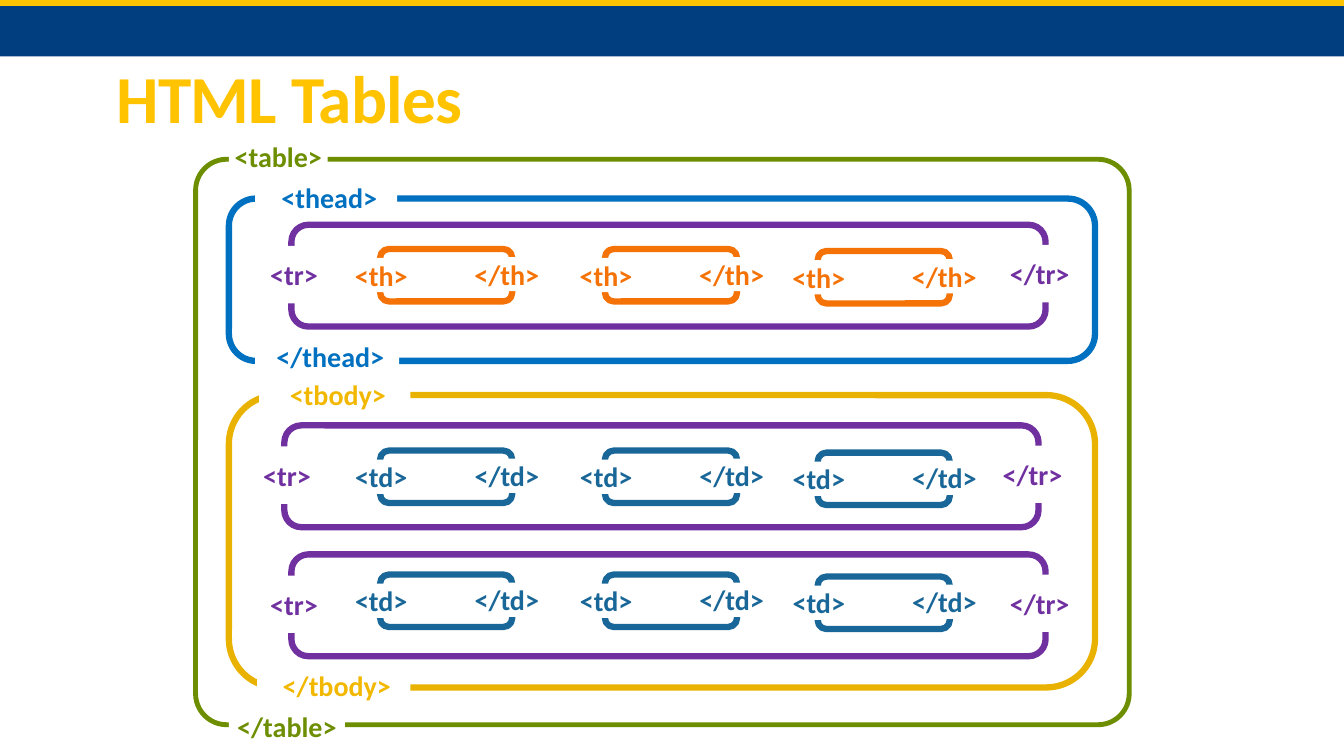
from pptx import Presentation
from pptx.dml.color import RGBColor
from pptx.enum.shapes import MSO_SHAPE as Shape
from pptx.enum.text import MSO_ANCHOR as Anchor, PP_ALIGN as Align
from pptx.util import Inches, Pt

COLORS = {
    "white": "FFFFFF", "navy": "013E7F", "gold": "FFC300",
    "table": "6C8E00", "thead": "0070C0", "tbody": "EAB200",
    "tbody text": "F2B800", "tr": "7030A0", "th": "F47206", "td": "196798",
}

BANDS = [("navy", (0, 0.06, 13.33, 0.5)), ("gold", (0, -0.01, 13.33, 0.07))]
TITLE = ("HTML Tables", (1.06, 0.53, 11.1, 0.98))

SECTIONS = [
    {"frame": (1.94, 1.58, 9.26, 5.61), "color": "table", "text": "table",
     "weight": 3.5, "corner": 0.055, "anchor": Anchor.TOP,
     "tags": [("<table>", (2.27, 1.38, 0.98, 0.34)),
              ("</table>", (2.27, 7.04, 1.15, 0.34))]},
    {"frame": (2.27, 1.97, 8.59, 1.61), "color": "thead", "text": "thead",
     "weight": 4.5, "corner": 0.1667, "anchor": Anchor.TOP,
     "tags": [(" <thead>", (2.53, 1.79, 1.41, 0.37)),
              (" </thead>", (2.53, 3.37, 1.43, 0.37))]},
    {"frame": (2.27, 3.92, 8.59, 2.9), "color": "tbody", "text": "tbody text",
     "weight": 4.5, "corner": 0.1667, "anchor": Anchor.MIDDLE,
     "tags": [(" <tbody>", (2.57, 3.74, 1.5, 0.34)),
              (" </tbody>", (2.55, 6.63, 1.52, 0.34))]},
]

ROWS = [
    {"left": 2.89, "top": 2.23, "cell": "th", "cell_top": 2.47},
    {"left": 2.82, "top": 4.22, "cell": "td", "cell_top": 4.47},
    {"left": 2.89, "top": 5.5, "cell": "td", "cell_top": 5.7},
]
CELLS = [(3.77, 0), (6, 0), (8.11, 0.02)]


def write(box, text, color, size=20, anchor=Anchor.MIDDLE, align=Align.CENTER):
    box.text_frame.vertical_anchor = anchor
    para = box.text_frame.paragraphs[0]
    para.alignment = align
    span = para.add_run()
    span.text = text
    span.font.name = "Calibri"
    span.font.size = Pt(size)
    span.font.bold = True
    span.font.color.rgb = RGBColor.from_string(COLORS[color])
    return para, span


def add_box(page, kind, place, fill=None, line=None, weight=4.5):
    box = page.shapes.add_shape(kind, *map(Inches, place))
    box.shadow.inherit = False
    if fill:
        box.fill.solid()
        box.fill.fore_color.rgb = RGBColor.from_string(COLORS[fill])
    else:
        box.fill.background()
    if line:
        box.line.color.rgb = RGBColor.from_string(COLORS[line])
        box.line.width = Pt(weight)
    else:
        box.line.fill.background()
    return box


def add_tag(page, text, place, color, anchor=Anchor.MIDDLE):
    box = add_box(page, Shape.RECTANGLE, place, fill="white")
    frame = box.text_frame
    frame.margin_left = frame.margin_right = 0
    frame.margin_top = frame.margin_bottom = 0
    frame.word_wrap = False
    write(box, text, color, anchor=anchor)


def add_title(page):
    text, place = TITLE
    box = page.shapes.add_textbox(*map(Inches, place))
    box.text_frame.word_wrap = True
    para, span = write(box, text, "gold", size=48, align=Align.LEFT)
    para.line_spacing = 0.85
    span.font._element.set("spc", "-50")


def add_section(page, section):
    frame = add_box(page, Shape.ROUNDED_RECTANGLE, section["frame"],
                    line=section["color"], weight=section["weight"])
    frame.adjustments[0] = section["corner"]
    for text, place in section["tags"]:
        add_tag(page, text, place, section["text"], section["anchor"])


def add_row(page, row):
    left, top, cell = row["left"], row["top"], row["cell"]
    add_box(page, Shape.ROUNDED_RECTANGLE, (left, top, 7.48, 1.01),
            fill="white", line="tr")
    add_tag(page, " <tr>", (left - 0.28, top + 0.21, 0.55, 0.57), "tr")
    add_tag(page, " </tr>", (left + 7.03, top + 0.2, 0.72, 0.57), "tr")
    for cell_left, drop in CELLS:
        cell_top = row["cell_top"] + drop
        add_box(page, Shape.ROUNDED_RECTANGLE, (cell_left, cell_top, 1.31, 0.52),
                fill="white", line=cell)
        add_tag(page, f" <{cell}>", (cell_left - 0.33, cell_top + 0.09, 0.62, 0.34), cell)
        add_tag(page, f" </{cell}>", (cell_left + 0.87, cell_top + 0.08, 0.71, 0.34), cell)


def main():
    deck = Presentation()
    deck.slide_width, deck.slide_height = Inches(13.33), Inches(7.5)
    page = deck.slides.add_slide(deck.slide_layouts[6])
    for color, place in BANDS:
        add_box(page, Shape.RECTANGLE, place, fill=color)
    add_title(page)
    for section in SECTIONS:
        add_section(page, section)
    for row in ROWS:
        add_row(page, row)
    deck.save("out.pptx")


if __name__ == "__main__":
    main()
